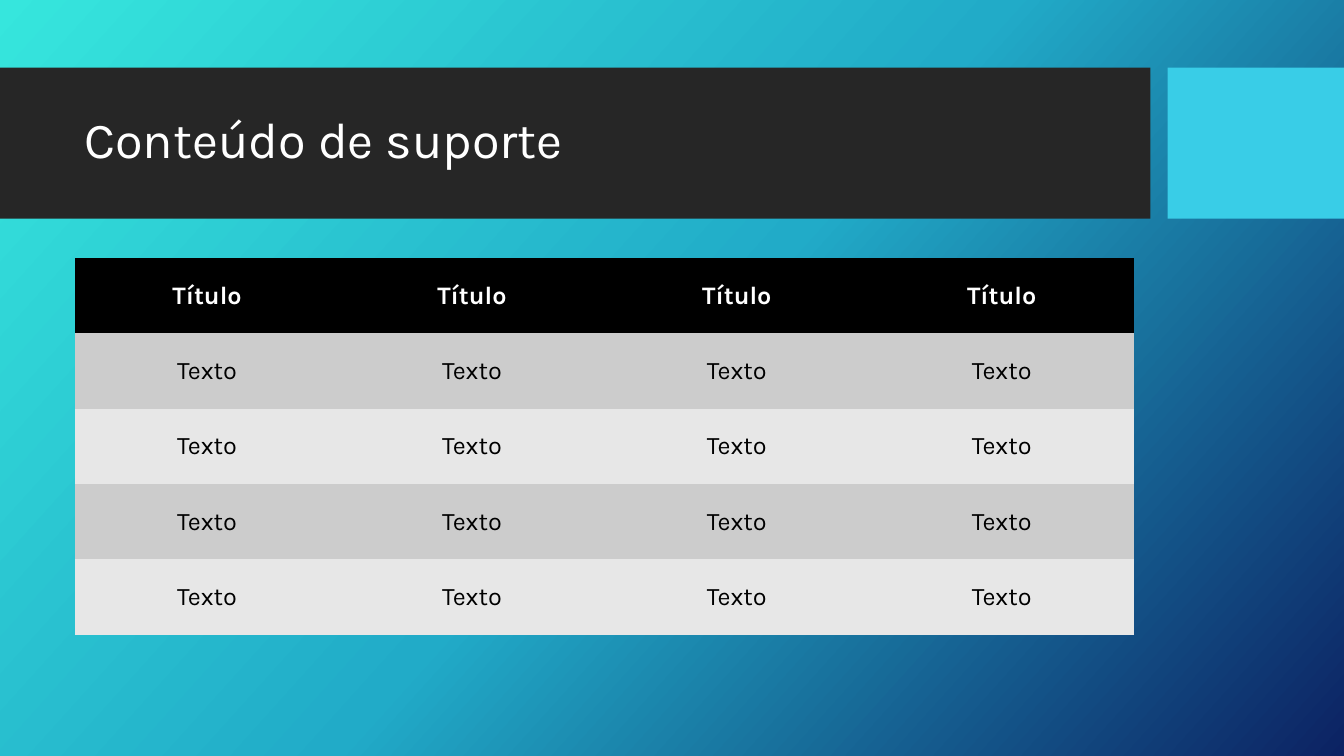
import copy

import pptx
import pptx.dml.color
import pptx.enum.shapes
import pptx.enum.text
import pptx.oxml.ns
import pptx.util

W, H = 13.33, 7.5
FONT = "Karla"
MARGIN, CONTENT_W = 0.74, 10.51
HEADER = ["Título"] * 4
BODY = [["Texto"] * 4] * 4
NO_GRID_STYLE = "{2D5ABB26-0587-4C30-8999-92F81FD0307C}"
qn = pptx.oxml.ns.qn
MIDDLE = pptx.enum.text.MSO_ANCHOR.MIDDLE


def rgb(value):
    return pptx.dml.color.RGBColor.from_string(value)


def inches(*lengths):
    return [pptx.util.Inches(length) for length in lengths]


def add_run(p, text, size, color, bold=False):
    r = p.add_run()
    r.text = text
    r.font.name = FONT
    r.font.size = pptx.util.Pt(size)
    r.font.bold = bold
    r.font.color.rgb = rgb(color)


def add_background(s, colors, angle):
    fill = s.background.fill
    fill.gradient()
    # A new gradient has two stops; add the remaining ones
    stops = s._element.find(".//" + qn("a:gsLst"))
    while len(stops) < len(colors):
        stops.append(copy.deepcopy(stops[0]))
    for i, (stop, color) in enumerate(zip(fill.gradient_stops, colors)):
        stop.position = i / (len(colors) - 1)
        stop.color.rgb = rgb(color)
    fill.gradient_angle = 360 - angle


def add_block(s, box, color):
    sp = s.shapes.add_shape(pptx.enum.shapes.MSO_SHAPE.RECTANGLE, *inches(*box))
    sp.shadow.inherit = False
    sp.fill.solid()
    sp.fill.fore_color.rgb = rgb(color)
    sp.line.fill.background()


def add_title_band(s, box, text):
    left, top, width, height = box
    accent_w, gap = 1.75, 0.17
    bar_w = width - accent_w - gap
    add_block(s, (left, top, bar_w, height), "262626")
    add_block(s, (left + bar_w + gap, top, accent_w, height), "39CDE7")

    # Title text inside the dark bar
    sp = s.shapes.add_textbox(*inches(left + MARGIN, top + 0.15, CONTENT_W, 1.18))
    tf = sp.text_frame
    tf.word_wrap = True
    tf.vertical_anchor = MIDDLE
    p = tf.paragraphs[0]
    p.line_spacing = 0.9
    add_run(p, text, 36, "FFFFFF")


def add_content_table(s, box, rows):
    frame = s.shapes.add_table(len(rows), len(rows[0]), *inches(*box))
    table = frame.table
    table.horz_banding = False
    table._tbl.tblPr.find(qn("a:tableStyleId")).text = NO_GRID_STYLE
    for column in table.columns:
        column.width = pptx.util.Inches(box[2] / len(rows[0]))
    for i, texts in enumerate(rows):
        table.rows[i].height = pptx.util.Inches(box[3] / len(rows))
        is_header = i == 0
        fill = "000000" if is_header else ("E7E7E7", "CCCCCC")[i % 2]
        for j, text in enumerate(texts):
            cell = table.cell(i, j)
            cell.fill.solid()
            cell.fill.fore_color.rgb = rgb(fill)
            cell.vertical_anchor = MIDDLE
            p = cell.text_frame.paragraphs[0]
            p.alignment = pptx.enum.text.PP_ALIGN.CENTER
            add_run(p, text, 18, "FFFFFF" if is_header else "000000", is_header)


def main():
    prs = pptx.Presentation()
    prs.slide_width, prs.slide_height = inches(W, H)
    s = prs.slides.add_slide(prs.slide_layouts[6])
    add_background(s, ["36E6DD", "21ABC8", "0C2263"], 42)
    add_title_band(s, (0, 0.67, W, 1.5), "Conteúdo de suporte")
    add_content_table(s, (MARGIN, 2.56, CONTENT_W, 3.74), [HEADER] + BODY)
    prs.save("out.pptx")


if __name__ == "__main__":
    main()
